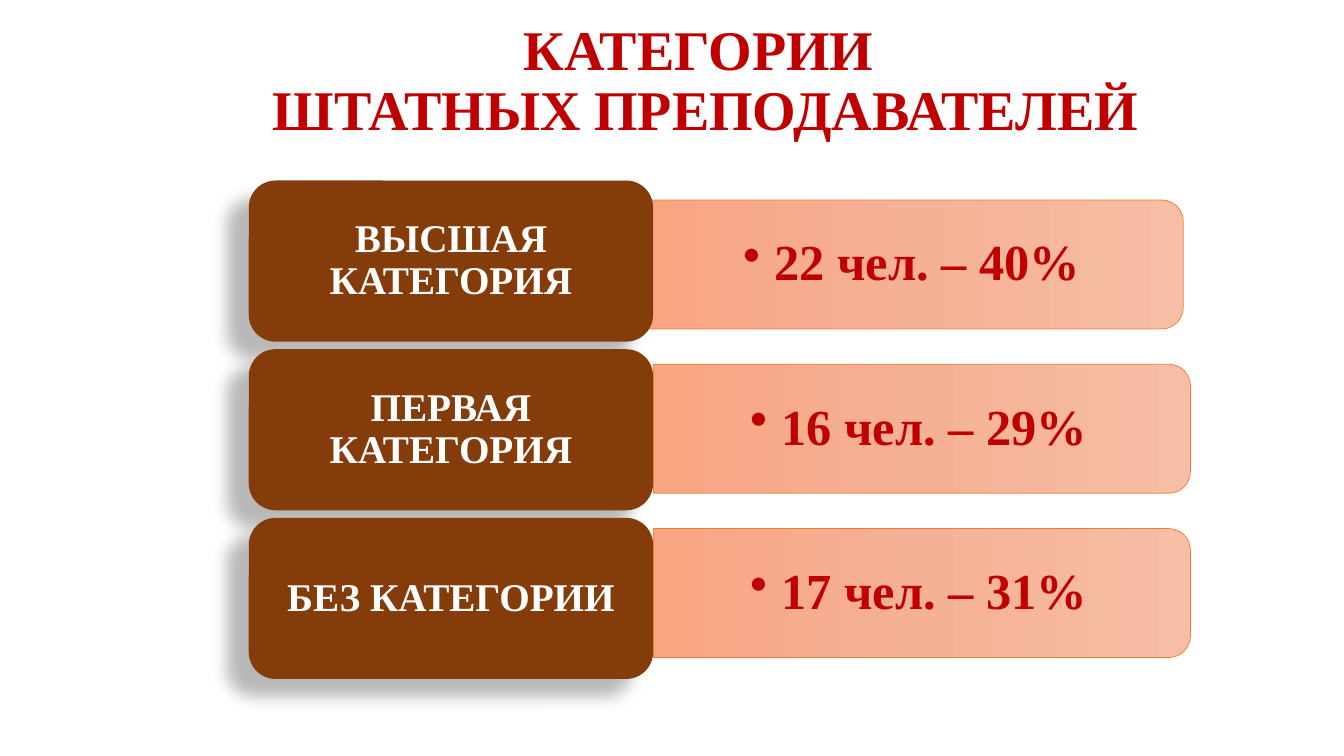
from copy import deepcopy

from lxml import etree
from pptx import Presentation
from pptx.dml.color import RGBColor
from pptx.enum.shapes import MSO_SHAPE
from pptx.enum.text import MSO_ANCHOR, PP_ALIGN
from pptx.oxml.ns import qn
from pptx.util import Cm, Pt

CARD_SHAPE = MSO_SHAPE.ROUNDED_RECTANGLE
BAR_SHAPE = MSO_SHAPE.ROUND_2_SAME_RECTANGLE
MIDDLE = MSO_ANCHOR.MIDDLE
CENTER = PP_ALIGN.CENTER

COLORS = {
    "red": "C00000",
    "brown": "843C0B",
    "white": "FFFFFF",
    "orange": "ED7D31",
    "shadow": "000000",
}
BAR_GRADIENT = [(0, "F7BDA5"), (0.5, "F5B196"), (1, "F8A582")]
FONT = "Times New Roman"

TITLE = "КАТЕГОРИИ \vШТАТНЫХ ПРЕПОДАВАТЕЛЕЙ"
# category, head count and share, left edge of the bar in cm
ROWS = [
    ("ВЫСШАЯ КАТЕГОРИЯ", "22 чел. – 40%", 16.28),
    ("ПЕРВАЯ КАТЕГОРИЯ", "16 чел. – 29%", 16.46),
    ("БЕЗ КАТЕГОРИИ", "17 чел. – 31%", 16.46),
]
CARD_LEFT, CARD_TOP, CARD_WIDTH, CARD_HEIGHT, CARD_PITCH = 6.27, 4.55, 10.19, 4.06, 4.25
BAR_TOP, BAR_WIDTH, BAR_HEIGHT, BAR_PITCH = 5.04, 13.54, 3.25, 4.14


def rgb(hex_color):
    return RGBColor.from_string(hex_color)


def write(shape, text, size, color, margins, bullet=False):
    """Fill the shape with one bold centred paragraph; margins are (side, top and bottom) in cm."""
    frame = shape.text_frame
    frame.word_wrap = True
    frame.vertical_anchor = MIDDLE
    frame.margin_left = frame.margin_right = Cm(margins[0])
    frame.margin_top = frame.margin_bottom = Cm(margins[1])
    paragraph = frame.paragraphs[0]
    paragraph.text = text
    paragraph.alignment = CENTER
    paragraph.line_spacing = 0.9
    if bullet:
        properties = paragraph._p.get_or_add_pPr()
        properties.set("marL", str(Cm(0.79)))
        properties.set("indent", str(-Cm(0.79)))
        etree.SubElement(properties, qn("a:buChar"), char="•")
    font = paragraph.font
    font.name = FONT
    font.size = Pt(size)
    font.bold = True
    font.color.rgb = rgb(color)


def add_soft_shadow(shape):
    effects = shape._element.spPr.find(qn("a:effectLst"))
    shadow = etree.SubElement(
        effects, qn("a:outerShdw"), blurRad=str(Pt(11.8)), dist=str(Pt(19.7)),
        dir=str(141 * 60000), algn="ctr", rotWithShape="0")
    color = etree.SubElement(shadow, qn("a:srgbClr"), val=COLORS["shadow"])
    etree.SubElement(color, qn("a:alpha"), val="28000")


def fill_with_gradient(shape):
    shape.fill.gradient()
    shape.fill.gradient_angle = 270
    stop_list = shape._element.spPr.find(qn("a:gradFill")).find(qn("a:gsLst"))
    stop_list.append(deepcopy(stop_list[0]))
    for stop, (position, color) in zip(shape.fill.gradient_stops, BAR_GRADIENT):
        stop.position = position
        stop.color.rgb = rgb(color)


def add_title(slide, left, top, width, height):
    title = slide.shapes.add_textbox(Cm(left), Cm(top), Cm(width), Cm(height))
    write(title, TITLE, 40, COLORS["red"], (0.25, 0.13))


def add_result_bar(slide, result, left, top, width, height):
    """Place a bar turned by 90 degrees, so that its rounded end points right."""
    offset = (width - height) / 2
    bar = slide.shapes.add_shape(
        BAR_SHAPE, Cm(left + offset), Cm(top - offset), Cm(height), Cm(width))
    bar.rotation = 90
    bar.shadow.inherit = False
    fill_with_gradient(bar)
    bar.line.color.rgb = rgb(COLORS["orange"])
    bar.line.width = Pt(0.5)
    label = slide.shapes.add_textbox(Cm(left), Cm(top), Cm(width - 0.15), Cm(height))
    write(label, result, 36, COLORS["red"], (0.69, 0.36), bullet=True)


def add_category_card(slide, category, left, top, width, height):
    card = slide.shapes.add_shape(CARD_SHAPE, Cm(left), Cm(top), Cm(width), Cm(height))
    card.shadow.inherit = False
    card.fill.solid()
    card.fill.fore_color.rgb = rgb(COLORS["brown"])
    card.line.fill.background()
    add_soft_shadow(card)
    write(card, category, 28, COLORS["white"], (0.3, 0.15))


def main():
    deck = Presentation()
    deck.slide_width, deck.slide_height = Cm(33.87), Cm(19.05)
    slide = deck.slides.add_slide(deck.slide_layouts[6])
    add_title(slide, 2.54, 0.48, 30.48, 3.18)
    for row, (category, result, bar_left) in enumerate(ROWS):
        add_result_bar(slide, result, bar_left, BAR_TOP + row * BAR_PITCH,
                       BAR_WIDTH, BAR_HEIGHT)
        add_category_card(slide, category, CARD_LEFT, CARD_TOP + row * CARD_PITCH,
                          CARD_WIDTH, CARD_HEIGHT)
    deck.save("out.pptx")


if __name__ == "__main__":
    main()
